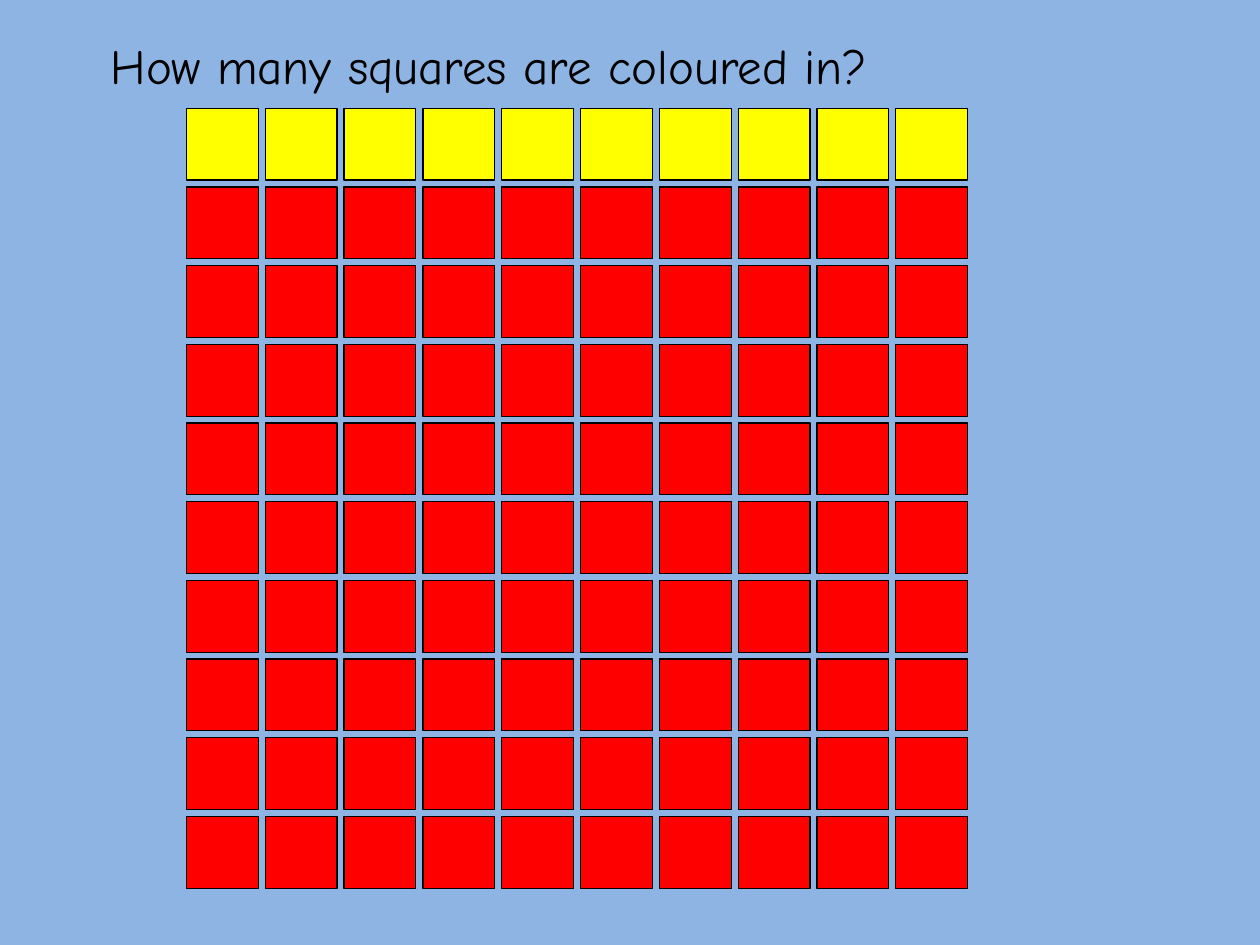
from dataclasses import dataclass

from pptx import Presentation, util as u
from pptx.dml.color import RGBColor
from pptx.enum import shapes, text


@dataclass(frozen=True)
class Theme:
    background: RGBColor = RGBColor.from_string("8EB4E3")
    ink: RGBColor = RGBColor.from_string("000000")
    first_row: RGBColor = RGBColor.from_string("FFFF00")
    other_rows: RGBColor = RGBColor.from_string("FF0000")
    font: str = "Comic Neue"
    question_size: u.Pt = u.Pt(28)
    outline: u.Pt = u.Pt(0.75)


THEME = Theme()


def set_attributes(target, values):
    for name, value in values.items():
        setattr(target, name, value)


def add_question(slide, box, wording):
    frame = slide.shapes.add_textbox(*map(u.Inches, box)).text_frame
    set_attributes(frame, {
        "word_wrap": True,
        "auto_size": text.MSO_AUTO_SIZE.SHAPE_TO_FIT_TEXT,
    })
    run = frame.paragraphs[0].add_run()
    run.text = wording
    set_attributes(run.font, {"name": THEME.font, "size": THEME.question_size})
    run.font.color.rgb = THEME.ink


def add_square(slide, left, top, side, colour):
    square = slide.shapes.add_shape(
        shapes.MSO_SHAPE.RECTANGLE, *map(u.Inches, (left, top, side, side)))
    square.shadow.inherit = False
    square.fill.solid()
    square.fill.fore_color.rgb = colour
    square.line.color.rgb = THEME.ink
    square.line.width = THEME.outline


def add_hundred_square(slide, box, count=10, side=0.57):
    """Spread count by count squares evenly over the box, the first row highlighted."""
    left, top, width, height = box
    column_step = (width - side) / (count - 1)
    row_step = (height - side) / (count - 1)
    for row in range(count):
        colour = THEME.other_rows if row else THEME.first_row
        for column in range(count):
            add_square(slide, left + column * column_step,
                       top + row * row_step, side, colour)


def main():
    presentation = Presentation()
    set_attributes(presentation, {
        "slide_width": u.Inches(10),
        "slide_height": u.Inches(7.5),
    })
    slide = presentation.slides.add_slide(presentation.slide_layouts[6])
    slide.background.fill.solid()
    slide.background.fill.fore_color.rgb = THEME.background
    add_question(slide, (0.78, 0.23, 8.52, 0.57),
                 "How many squares are coloured in?")
    add_hundred_square(slide, (1.48, 0.86, 6.2, 6.19))
    presentation.save("out.pptx")


if __name__ == "__main__":
    main()
